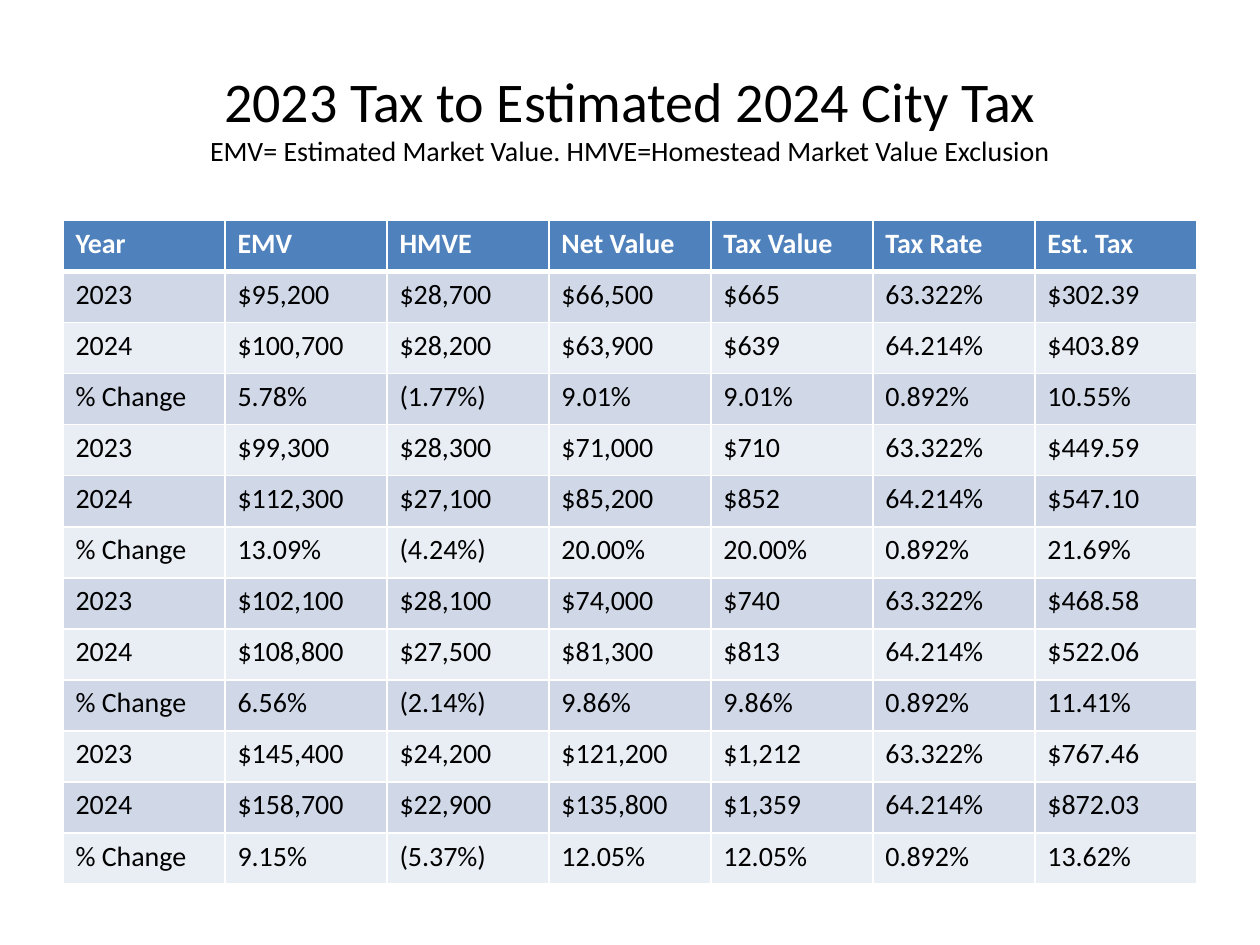
from lxml import etree
from pptx import Presentation, util as u
from pptx.dml.color import RGBColor
from pptx.enum import text
from pptx.oxml.ns import qn

BLACK = RGBColor(0x00, 0x00, 0x00)
WHITE = RGBColor(0xFF, 0xFF, 0xFF)
HEADER_BLUE = RGBColor(0x4F, 0x81, 0xBD)
BAND_DARK = RGBColor(0xD0, 0xD8, 0xE8)
BAND_LIGHT = RGBColor(0xE9, 0xED, 0xF4)

HEADINGS = ["Year", "EMV", "HMVE", "Net Value", "Tax Value", "Tax Rate", "Est. Tax"]
LABELS = ["2023", "2024", "% Change"]
RATES = ["63.322%", "64.214%", "0.892%"]
# EMV, HMVE, net value, tax value, estimated tax; three rows per home
HOMES = [
    [
        ["$95,200", "$28,700", "$66,500", "$665", "$302.39"],
        ["$100,700", "$28,200", "$63,900", "$639", "$403.89"],
        ["5.78%", "(1.77%)", "9.01%", "9.01%", "10.55%"],
    ],
    [
        ["$99,300", "$28,300", "$71,000", "$710", "$449.59"],
        ["$112,300", "$27,100", "$85,200", "$852", "$547.10"],
        ["13.09%", "(4.24%)", "20.00%", "20.00%", "21.69%"],
    ],
    [
        ["$102,100", "$28,100", "$74,000", "$740", "$468.58"],
        ["$108,800", "$27,500", "$81,300", "$813", "$522.06"],
        ["6.56%", "(2.14%)", "9.86%", "9.86%", "11.41%"],
    ],
    [
        ["$145,400", "$24,200", "$121,200", "$1,212", "$767.46"],
        ["$158,700", "$22,900", "$135,800", "$1,359", "$872.03"],
        ["9.15%", "(5.37%)", "12.05%", "12.05%", "13.62%"],
    ],
]


class TaxSlide:
    """Holds the style and the current slide."""

    font_name = "Calibri"
    body_size = 16

    def __init__(self, page):
        self.page = page

    def style(self, font, size, color=BLACK, bold=False):
        values = {"name": self.font_name, "size": u.Pt(size), "bold": bold}
        for name, value in values.items():
            setattr(font, name, value)
        font.color.rgb = color

    def title(self, lines, left, top, width, height):
        box = self.page.shapes.add_textbox(left, top, width, height)
        frame = box.text_frame
        frame.word_wrap = True
        frame.vertical_anchor = text.MSO_ANCHOR.MIDDLE
        para = frame.paragraphs[0]
        para.alignment = text.PP_ALIGN.CENTER
        for index, (words, size) in enumerate(lines):
            if index:
                para.add_line_break()
            span = para.add_run()
            span.text = words
            self.style(span.font, size)

    def border(self, cell, side, points):
        properties = cell._tc.get_or_add_tcPr()
        line = etree.SubElement(properties, qn(f"a:ln{side}"), w=str(u.Pt(points)))
        fill = etree.SubElement(line, qn("a:solidFill"))
        etree.SubElement(fill, qn("a:srgbClr"), val=str(WHITE))

    def cell(self, cell, words, row):
        header = row == 0
        weights = {"L": 1, "R": 1, "T": 3 if row == 1 else 1, "B": 3 if header else 1}
        for side, points in weights.items():
            self.border(cell, side, points)
        cell.fill.solid()
        band = BAND_DARK if row % 2 else BAND_LIGHT
        cell.fill.fore_color.rgb = HEADER_BLUE if header else band
        span = cell.text_frame.paragraphs[0].add_run()
        span.text = words
        self.style(span.font, self.body_size, WHITE if header else BLACK, header)

    def table(self, rows, left, top, width, height):
        frame = self.page.shapes.add_table(
            len(rows), len(rows[0]), left, top, width, height
        )
        for row, values in enumerate(rows):
            for column, words in enumerate(values):
                self.cell(frame.table.cell(row, column), words, row)


def main():
    deck = Presentation()
    deck.slide_width, deck.slide_height = u.Inches(10), u.Inches(7.5)
    slide = TaxSlide(deck.slides.add_slide(deck.slide_layouts[6]))

    # Title and key to the abbreviations
    slide.title(
        [
            ("2023 Tax to Estimated 2024 City Tax", 32),
            ("EMV= Estimated Market Value. HMVE=Homestead Market Value Exclusion", 16),
        ],
        u.Inches(0.5), u.Inches(0.3), u.Inches(9), u.Inches(1.25),
    )

    # Tax table: each home has two years and the change between them
    rows = [HEADINGS]
    for home in HOMES:
        for label, rate, values in zip(LABELS, RATES, home):
            rows.append([label, *values[:-1], rate, values[-1]])
    slide.table(rows, u.Inches(0.5), u.Inches(1.75), u.Inches(9), u.Inches(5.27))

    deck.save("out.pptx")


if __name__ == "__main__":
    main()
